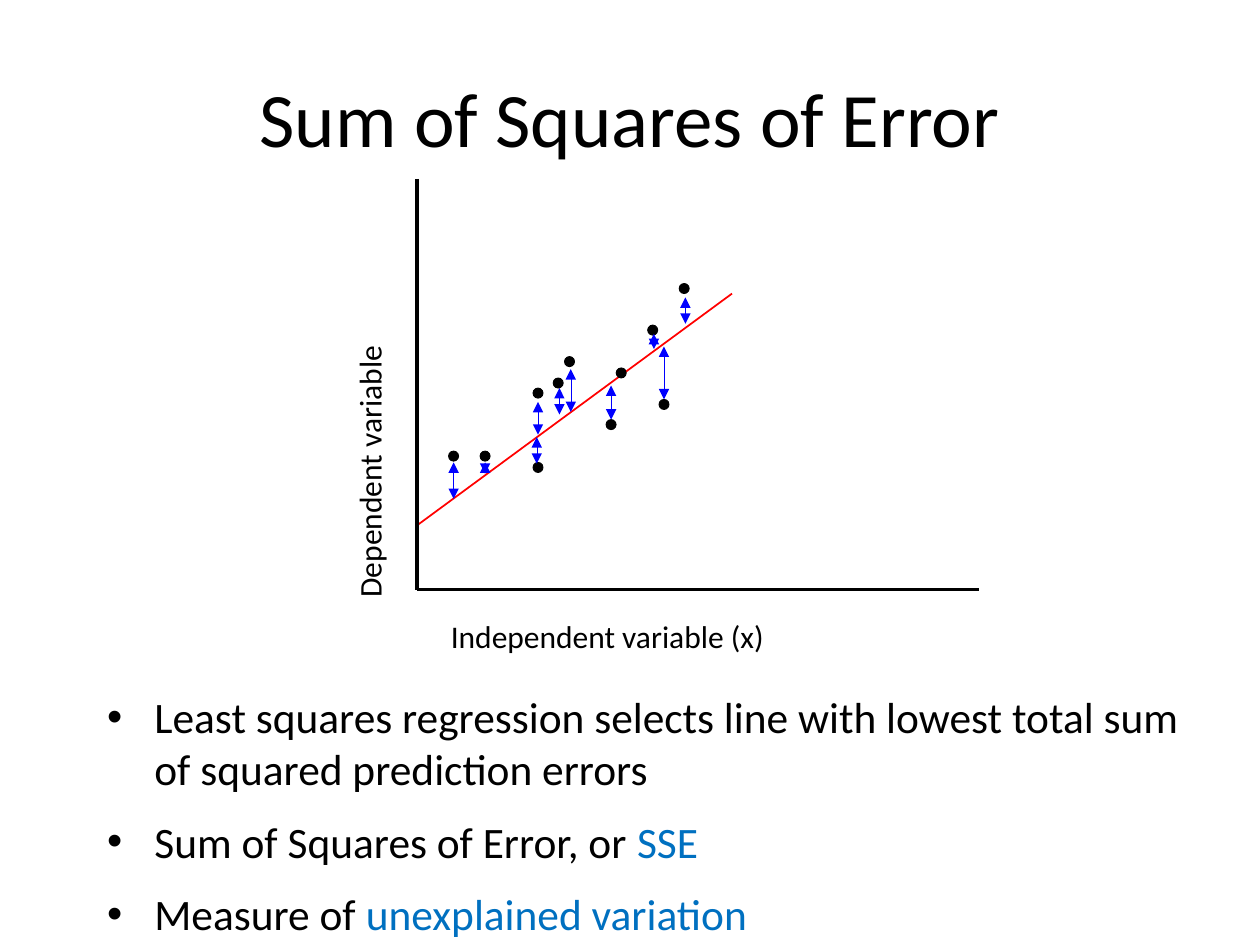
from lxml import etree
from pptx import Presentation
from pptx import util as u
from pptx.dml.color import RGBColor
from pptx.enum import shapes, text
from pptx.oxml.ns import qn

BLACK = RGBColor(0, 0, 0)
RED = RGBColor(0xFF, 0, 0)
BLUE = RGBColor(0, 0, 0xFF)
ACCENT = RGBColor(0, 0x70, 0xC0)
DOT = 0.08


def add_run(p, words, size=18, color=BLACK):
    r = p.add_run()
    r.text = words
    r.font.name = "Calibri"
    r.font.size = u.Pt(size)
    r.font.color.rgb = color


def add_line(grp, x1, y1, x2, y2, color, width, arrows=False):
    cx = grp.shapes.add_connector(shapes.MSO_CONNECTOR.STRAIGHT, *map(u.Inches, (x1, y1, x2, y2)))
    cx.line.color.rgb = color
    cx.line.width = u.Pt(width)
    if arrows:
        for end in ("a:headEnd", "a:tailEnd"):
            etree.SubElement(cx.line._get_or_add_ln(), qn(end), type="triangle")
    etree.SubElement(cx._element.spPr, qn("a:effectLst"))


prs = Presentation()
prs.slide_width, prs.slide_height = u.Inches(10), u.Inches(7.5)
s = prs.slides.add_slide(prs.slide_layouts[1])

title, body = s.placeholders
boxes = [(title, (0.5, 0.3, 9, 1.25)), (body, (0.75, 5.43, 9, 1.91))]
for sp, box in boxes:
    sp.left, sp.top, sp.width, sp.height = map(u.Inches, box)
    sp.text_frame.auto_size = text.MSO_AUTO_SIZE.NONE
add_run(title.text_frame.paragraphs[0], "Sum of Squares of Error", size=44)

bullets = [
    ("Least squares regression selects line with lowest total sum of squared prediction errors", ""),
    ("Sum of Squares of Error, or ", "SSE"),
    ("Measure of ", "unexplained variation"),
]
tf = body.text_frame
for i, (plain, accent) in enumerate(bullets):
    p = tf.add_paragraph() if i else tf.paragraphs[0]
    p.space_before = u.Pt(11.5)
    add_run(p, plain, size=24.8)
    if accent:
        add_run(p, accent, size=24.8, color=ACCENT)

grp = s.shapes.add_group_shape()
add_line(grp, 3.31, 4.17, 5.81, 2.33, RED, 1)
add_line(grp, 3.31, 1.42, 3.31, 4.68, BLACK, 2)
add_line(grp, 3.31, 4.68, 7.77, 4.68, BLACK, 2)

points = [
    (4.23, 3.67), (3.81, 3.58), (4.39, 3), (4.81, 3.33), (4.48, 2.83), (4.89, 2.92),
    (5.23, 3.17), (5.14, 2.58), (4.23, 3.08), (3.56, 3.58), (5.39, 2.25),
]
for x, y in points:
    dot = grp.shapes.add_shape(shapes.MSO_SHAPE.OVAL, *map(u.Inches, (x, y, DOT, DOT)))
    dot.shadow.inherit = False
    dot.fill.solid()
    dot.fill.fore_color.rgb = BLACK
    dot.line.color.rgb = BLACK
    dot.line.width = u.Pt(0.5)

labels = [
    ("Independent variable (x)", (3.48, 4.85, 2.9, 0.4), 0, False),
    ("Dependent variable", (1.6, 3.31, 2.66, 0.4), 270, True),
]
for words, box, rotation, wrap in labels:
    tb = grp.shapes.add_textbox(*map(u.Inches, box))
    tb.rotation = rotation
    tb.text_frame.word_wrap = wrap
    tb.text_frame.auto_size = text.MSO_AUTO_SIZE.SHAPE_TO_FIT_TEXT
    add_run(tb.text_frame.paragraphs[0], words)

errors = [
    (3.6, 3.67, 3.96), (3.85, 3.67, 3.76), (4.26, 3.47, 3.68), (4.27, 3.19, 3.45),
    (4.44, 3.08, 3.29), (4.53, 2.93, 3.27), (4.85, 3.06, 3.33), (5.27, 2.75, 3.17),
    (5.44, 2.36, 2.57), (5.19, 2.65, 2.77),
]
for x, top, bottom in errors:
    add_line(grp, x, top, x, bottom, BLUE, 0.25, arrows=True)

prs.save("out.pptx")
